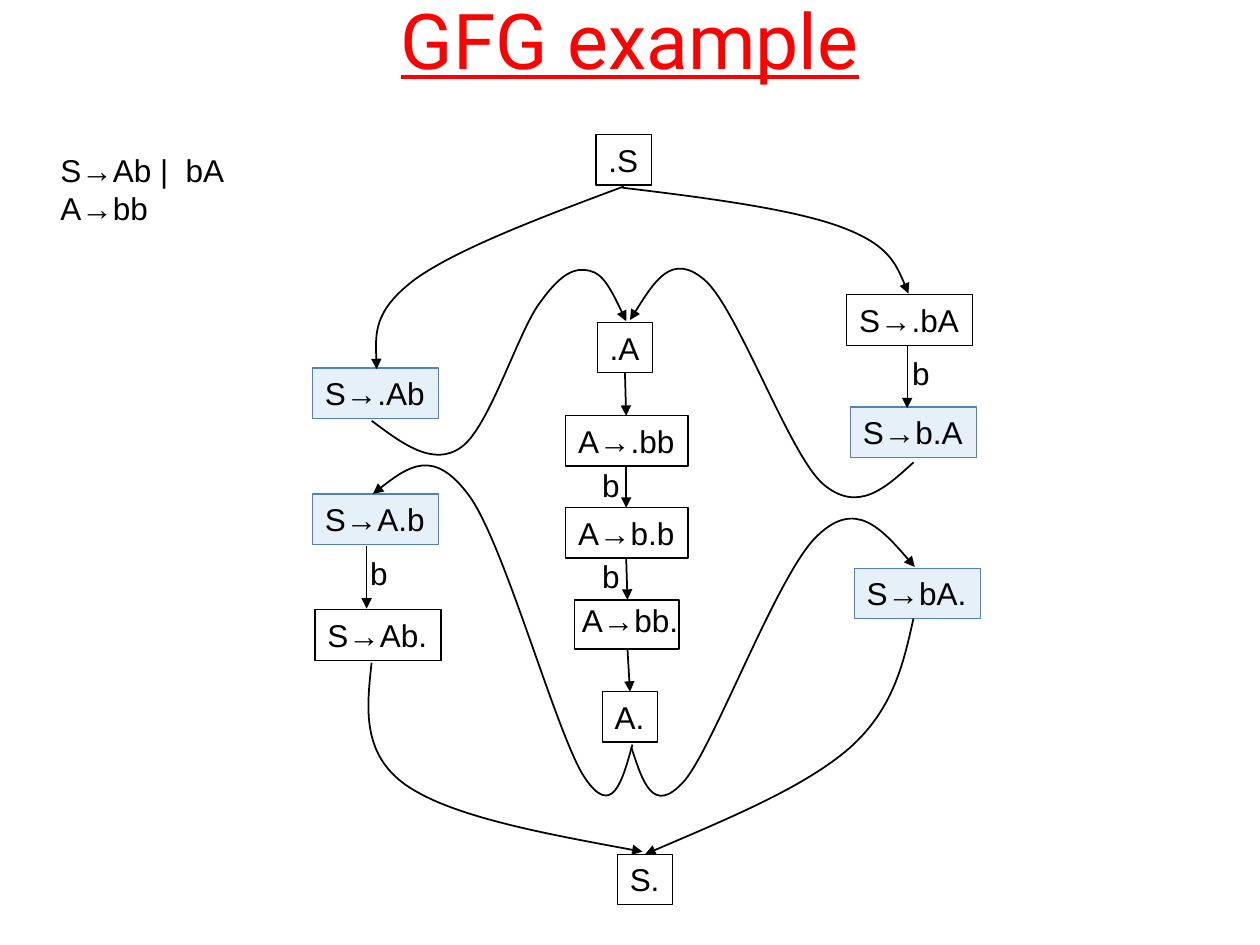
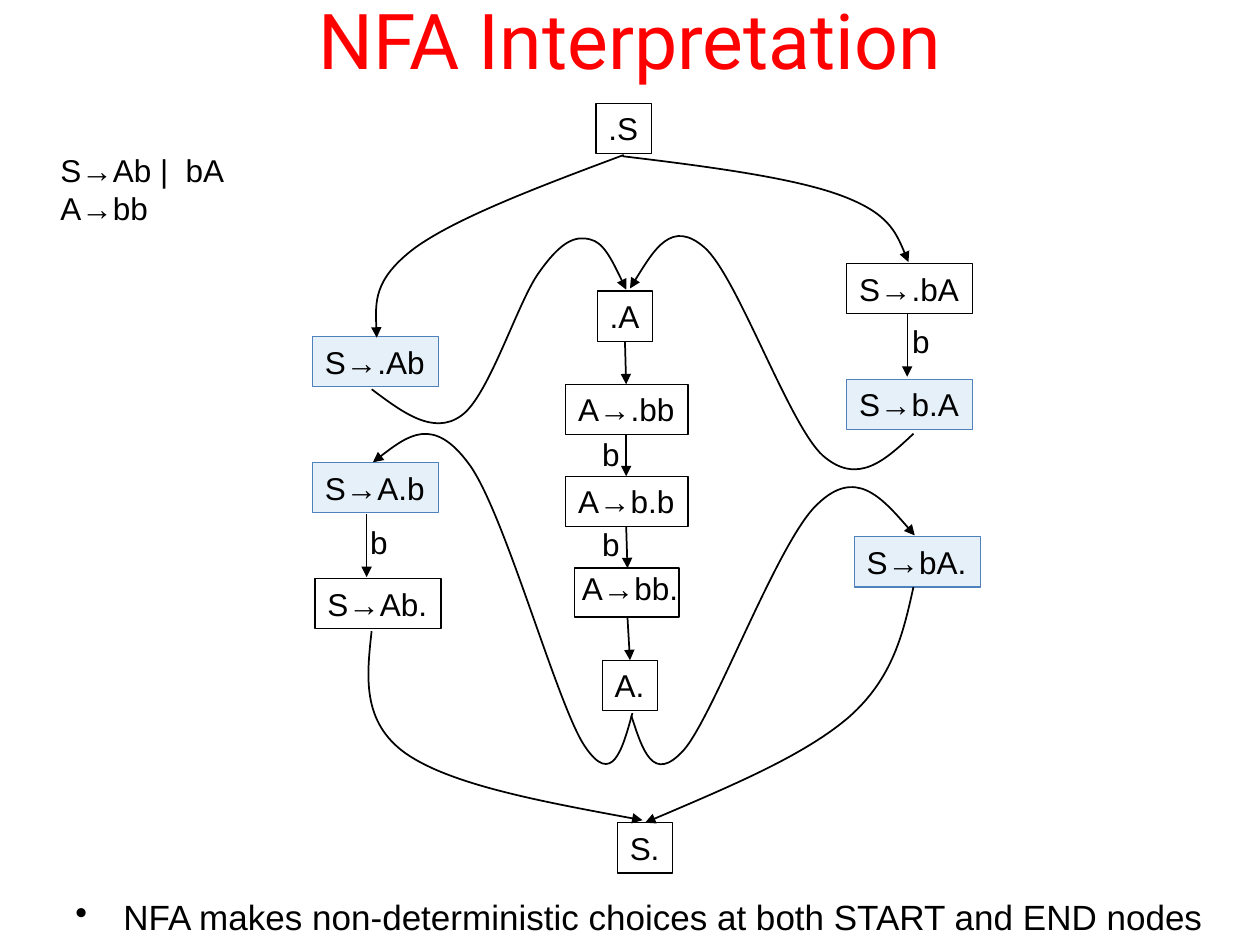
from lxml import etree
from pptx import Presentation
from pptx.dml.color import RGBColor
from pptx.enum.shapes import MSO_CONNECTOR, MSO_SHAPE
from pptx.enum.text import MSO_ANCHOR, MSO_AUTO_SIZE, PP_ALIGN
from pptx.oxml.ns import qn
from pptx.util import Cm, Pt

RECTANGLE = MSO_SHAPE.RECTANGLE
STRAIGHT = MSO_CONNECTOR.STRAIGHT
TOP, MIDDLE = MSO_ANCHOR.TOP, MSO_ANCHOR.MIDDLE
LEFT, CENTER = PP_ALIGN.LEFT, PP_ALIGN.CENTER
GROW = MSO_AUTO_SIZE.SHAPE_TO_FIT_TEXT

BLACK = RGBColor(0x00, 0x00, 0x00)
RED = RGBColor(0xFF, 0x00, 0x00)
CALL_FILL = RGBColor(0x00, 0x70, 0xC0)
CALL_LINE = RGBColor(0x4F, 0x81, 0xBD)
TITLE_FONT, BODY_FONT = "Roboto", "Arial"
THIN, THICK = Pt(0.75), Pt(1)
GRID = 2.54
NODE_HEIGHT = 0.4
CURVE_STEPS = 24

GRAMMAR = ["S→Ab |  bA", "A→bb"]
PLAIN_NODES = [
    (".S", 4.73, 1.07, 0.44), ("S.", 4.9, 6.78, 0.44),
    (".A", 4.74, 2.56, 0.44), ("A.", 4.78, 5.49, 0.44),
    ("A→.bb", 4.49, 3.3, 0.97), ("A→b.b", 4.49, 4.03, 0.97),
    ("S→Ab.", 2.5, 4.84, 1), ("S→.bA", 6.72, 2.34, 1),
]
CALL_NODES = [("S→.Ab", 2.48, 2.92, 1), ("S→A.b", 2.48, 3.92, 1), ("S→bA.", 6.78, 4.51, 1)]
SCAN_LABELS = [(4.68, 3.65), (4.68, 4.37), (2.84, 4.35), (7.14, 2.76)]
SIDE_ARROWS = [((2.91, 4.33), (2.91, 4.83)), ((7.2, 2.74), (7.2, 3.24))]
MIDDLE_ARROWS = [
    ((4.96, 2.96), (4.97, 3.3)), ((4.97, 3.7), (4.97, 4.03)),
    ((4.97, 4.43), (4.98, 4.76)), ((4.98, 5.15), (5, 5.49)),
]
CURVES = [
    [(2.95, 3.34), (3.19, 3.52), (3.44, 3.71), (3.66, 3.55), (3.88, 3.4), (4.11, 2.64),
     (4.28, 2.41), (4.45, 2.17), (4.56, 2.12), (4.68, 2.15), (4.79, 2.17), (4.88, 2.36),
     (4.97, 2.55)],
    [(5.02, 5.91), (4.94, 6.2), (4.86, 6.5), (4.64, 6.17), (4.42, 5.84), (4, 4.3),
     (3.72, 3.93), (3.44, 3.55), (3.2, 3.73), (2.96, 3.92)],
    [(4.95, 1.48), (4.28, 1.73), (3.62, 1.98), (3.29, 2.22), (2.96, 2.47), (2.98, 2.7),
     (2.99, 2.93)],
    [(4.94, 1.49), (5.61, 1.57), (6.29, 1.66), (6.67, 1.8), (7.05, 1.94), (7.13, 2.13),
     (7.21, 2.33)],
    [(5.01, 5.93), (5.1, 6.2), (5.18, 6.48), (5.43, 6.2), (5.67, 5.92), (6.18, 4.53),
     (6.49, 4.25), (6.79, 3.96), (7.03, 4.23), (7.26, 4.5)],
    [(7.25, 4.91), (7.17, 5.27), (7.09, 5.63), (6.74, 5.94), (6.38, 6.25), (5.75, 6.51),
     (5.12, 6.78)],
    [(2.95, 5.26), (2.91, 5.62), (2.87, 5.98), (3.22, 6.23), (3.58, 6.48), (4.34, 6.62),
     (5.1, 6.76)],
]
RIGHT_CALL_CURVE = [
    (7.25, 3.67), (7.03, 3.87), (6.81, 4.08), (6.53, 3.84), (6.26, 3.6), (5.85, 2.44),
    (5.59, 2.22), (5.33, 2), (5.17, 2.27), (5, 2.54),
]


def lengths(*values):
    """Turn grid units into lengths."""
    return [Cm(value * GRID) for value in values]


def bezier_point(corners, fraction):
    """Return the point at a fraction of a cubic curve."""
    rest = 1 - fraction
    weights = (rest**3, 3 * rest**2 * fraction, 3 * rest * fraction**2, fraction**3)
    return tuple(
        round(sum(weight * corner[axis] for weight, corner in zip(weights, corners)))
        for axis in (0, 1)
    )


class GraphDeck:
    """Draws the elements of grammar flow graph slides."""

    def __init__(self):
        """Start an empty deck."""
        self.presentation = Presentation()
        self.presentation.slide_width, self.presentation.slide_height = lengths(10, 7.5)
        self.slide = None

    def new_slide(self, title, underline=None):
        """Add a slide with its title and the grammar."""
        self.slide = self.presentation.slides.add_slide(self.presentation.slide_layouts[6])
        box = self.slide.shapes.add_textbox(*lengths(0.5, -0.32, 9, 1.25))
        frame = box.text_frame
        frame.word_wrap = True
        frame.vertical_anchor = MIDDLE
        paragraph = frame.paragraphs[0]
        paragraph.text = title
        paragraph.alignment = CENTER
        paragraph.font.name = TITLE_FONT
        paragraph.font.size = Pt(44)
        paragraph.font.color.rgb = RED
        paragraph.font.underline = underline
        self.text(GRAMMAR, 0.38, 1.15, 1.51, 0.71)

    def set_lines(self, shape, lines, size=18):
        """Put left-aligned lines into a shape."""
        frame = shape.text_frame
        frame.text = "\n".join(lines)
        frame.word_wrap = False
        frame.auto_size = GROW
        frame.vertical_anchor = TOP
        for paragraph in frame.paragraphs:
            paragraph.alignment = LEFT
            paragraph.font.name = BODY_FONT
            paragraph.font.size = Pt(size)
            paragraph.font.color.rgb = BLACK

    def text(self, lines, left, top, width, height=NODE_HEIGHT, size=18):
        """Add a text box."""
        box = self.slide.shapes.add_textbox(*lengths(left, top, width, height))
        self.set_lines(box, lines, size)
        return box

    def bullet(self, line, left, top, width, height):
        """Add a bulleted line."""
        box = self.text([line], left, top, width, height, 20)
        indent = lengths(0.38)[0]
        properties = box.element.find(".//" + qn("a:pPr"))
        properties.set("marL", str(indent))
        properties.set("indent", str(-indent))
        properties.insert(0, etree.Element(qn("a:buChar"), char="•"))

    def rectangle(self, left, top, width, height, color=BLACK, weight=THIN):
        """Add an outlined rectangle without fill."""
        shape = self.slide.shapes.add_shape(RECTANGLE, *lengths(left, top, width, height))
        shape.shadow.inherit = False
        shape.fill.background()
        shape.line.color.rgb = color
        shape.line.width = weight
        return shape

    def node(self, label, left, top, width, call=False):
        """Add a labelled node, tinted if it belongs to a call."""
        shape = self.rectangle(left, top, width, NODE_HEIGHT, CALL_LINE if call else BLACK)
        if call:
            shape.fill.solid()
            shape.fill.fore_color.rgb = CALL_FILL
            color = shape.element.spPr.find(qn("a:solidFill"))[0]
            etree.SubElement(color, qn("a:alpha"), val="10000")
        self.set_lines(shape, [label])

    def arrowhead(self, shape, weight):
        """Style a line and point its end."""
        shape.line.color.rgb = BLACK
        shape.line.width = weight
        line = shape.element.spPr.find(qn("a:ln"))
        etree.SubElement(line, qn("a:tailEnd"), type="triangle")

    def arrow(self, start, end, weight):
        """Add a straight arrow."""
        connector = self.slide.shapes.add_connector(STRAIGHT, *lengths(*start, *end))
        self.arrowhead(connector, weight)
        etree.SubElement(connector.element.spPr, qn("a:effectLst"))

    def curve(self, corners):
        """Add a curved arrow through chained cubic segments."""
        points = [lengths(*corner) for corner in corners]
        outline = [
            bezier_point(points[first:first + 4], step / CURVE_STEPS)
            for first in range(0, len(points) - 1, 3)
            for step in range(1, CURVE_STEPS + 1)
        ]
        builder = self.slide.shapes.build_freeform(*points[0])
        builder.add_line_segments(outline, close=False)
        shape = builder.convert_to_shape()
        shape.shadow.inherit = False
        shape.fill.background()
        self.arrowhead(shape, THICK)
        track = shape.element.find(".//" + qn("a:path"))
        for segment in track.findall(qn("a:lnTo")):
            track.remove(segment)
        for index, (x, y) in enumerate(points[1:]):
            if index % 3 == 0:
                segment = etree.SubElement(track, qn("a:cubicBezTo"))
            etree.SubElement(segment, qn("a:pt"), x=str(x - shape.left), y=str(y - shape.top))

    def graph(self, call_left, call_top, rise=0, stretch=1):
        """Draw the flow graph, raised and with its right call stretched."""
        for label, left, top, width in PLAIN_NODES:
            self.node(label, left, top - rise, width)
        for label, left, top, width in CALL_NODES:
            self.node(label, left, top - rise, width, call=True)
        self.node("S→b.A", call_left, call_top, 1, call=True)
        self.text(["A→bb."], 4.52, 4.72 - rise, 0.97)
        self.rectangle(4.56, 4.76 - rise, 0.83, 0.39, weight=THICK)
        for left, top in SCAN_LABELS:
            self.text(["b"], left, top - rise, 0.34)
        for arrows, weight in ((SIDE_ARROWS, THIN), (MIDDLE_ARROWS, THICK)):
            for (x1, y1), (x2, y2) in arrows:
                self.arrow((x1, y1 - rise), (x2, y2 - rise), weight)
        tip = RIGHT_CALL_CURVE[-1][1]
        stretched = [(x, tip + (y - tip) * stretch) for x, y in RIGHT_CALL_CURVE]
        for corners in CURVES + [stretched]:
            self.curve([(x, y - rise) for x, y in corners])


def main():
    """Build and save both slides."""
    deck = GraphDeck()
    deck.new_slide("GFG example", underline=True)
    deck.graph(6.75, 3.23)
    deck.new_slide("NFA Interpretation")
    deck.graph(6.72, 3.01, rise=0.25, stretch=1.02)
    deck.bullet("NFA makes non-deterministic choices at both START and END nodes",
                0.5, 7.06, 9.22, 0.44)
    deck.presentation.save("out.pptx")


if __name__ == "__main__":
    main()
